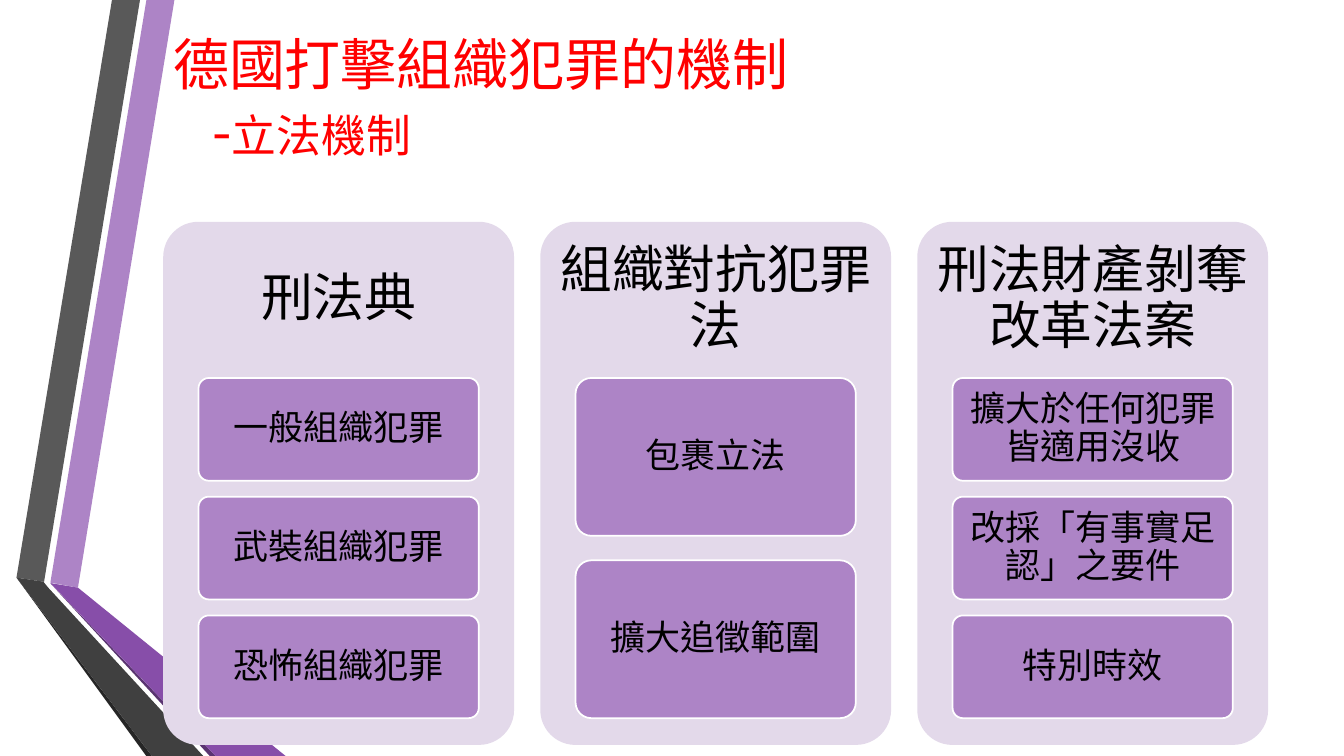
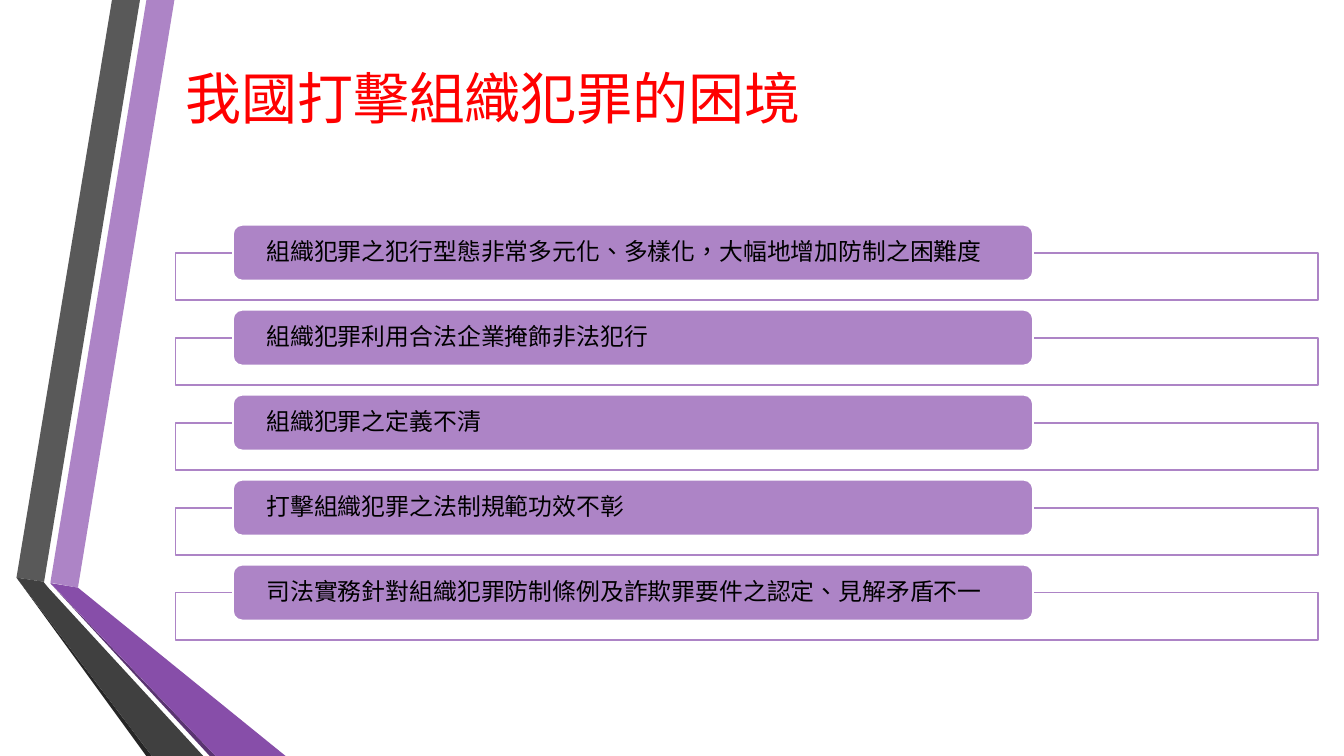
from dataclasses import dataclass

from lxml.etree import SubElement
from pptx import Presentation
from pptx.dml.color import RGBColor as Rgb
from pptx.enum.shapes import MSO_SHAPE as Form
from pptx.enum.text import MSO_ANCHOR as Anchor, PP_ALIGN as Align
from pptx.oxml.ns import qn
from pptx.util import Pt


@dataclass(frozen=True)
class Theme:
    font: str = "Noto Sans CJK SC"
    red: str = "FF0000"
    ink: str = "000000"
    white: str = "FFFFFF"
    lilac: str = "AD84C6"
    pale: str = "E3D9EA"
    violet: str = "874EA9"
    plum: str = "5A3471"
    gray: str = "595959"
    dark: str = "404040"
    coal: str = "262626"
    title: int = 40
    sub: int = 32
    head: int = 37
    item: int = 25
    row: int = 17
    edge: float = 1.25


THEME = Theme()

BANDS = [
    (THEME.lilac, [(36, 416.2), (55.7, 419.8), (124.6, 0), (104.6, 0)]),
    (THEME.gray, [(100, 0), (80, 0), (11.8, 412.6), (31.5, 415.6)]),
    (THEME.coal, [(11.8, 412.6), (104.5, 540), (108.5, 540)]),
    (THEME.plum, [(36, 416.7), (149.8, 540), (154, 540)]),
    (THEME.violet, [(36, 416.5), (154, 540), (204, 540), (55.7, 419.8)]),
    (THEME.dark, [(145.2, 540), (34.5, 419.8), (31, 415.5), (11.8, 412.6), (108.5, 540)]),
]

LAWS = [
    ("刑法典", ["一般組織犯罪", "武裝組織犯罪", "恐怖組織犯罪"]),
    ("組織對抗犯罪法", ["包裹立法", "擴大追徵範圍"]),
    ("刑法財產剝奪改革法案",
     ["擴大於任何犯罪皆適用沒收", "改採「有事實足認」之要件", "特別時效"]),
]

WOES = [
    "組織犯罪之犯行型態非常多元化、多樣化，大幅地增加防制之困難度",
    "組織犯罪利用合法企業掩飾非法犯行",
    "組織犯罪之定義不清",
    "打擊組織犯罪之法制規範功效不彰",
    "司法實務針對組織犯罪防制條例及詐欺罪要件之認定、見解矛盾不一",
]


def write(par, text, size, color=THEME.ink, align=Align.LEFT, lead=0.9):
    par.alignment = align
    par.line_spacing = lead
    run = par.add_run()
    run.text = text
    run.font.size = Pt(size)
    run.font.name = THEME.font
    run.font.color.rgb = Rgb.from_string(color)
    props = run.font._element
    props.set("lang", "zh-TW")
    SubElement(props, qn("a:ea")).set("typeface", THEME.font)


class Deck:
    def __init__(self, theme):
        self.theme = theme
        self.show = Presentation()
        self.show.slide_width = Pt(960)
        self.show.slide_height = Pt(540)
        self.slide = None

    def start(self):
        self.slide = self.show.slides.add_slide(self.show.slide_layouts[6])
        for color, points in BANDS:
            self.band(color, points)

    def paint(self, shape, fill, line=None):
        shape.shadow.inherit = False
        shape.fill.solid()
        shape.fill.fore_color.rgb = Rgb.from_string(fill)
        if line:
            shape.line.color.rgb = Rgb.from_string(line)
            shape.line.width = Pt(self.theme.edge)
        else:
            shape.line.fill.background()

    def band(self, color, points):
        first, *rest = [(Pt(x), Pt(y)) for x, y in points]
        pen = self.slide.shapes.build_freeform(*first)
        pen.add_line_segments(rest, close=True)
        self.paint(pen.convert_to_shape(), color)

    def frame(self, shape, pad):
        frame = shape.text_frame
        frame.word_wrap = True
        frame.vertical_anchor = Anchor.MIDDLE
        frame.margin_left, frame.margin_top, frame.margin_right, frame.margin_bottom = map(Pt, pad)
        return frame

    def title(self, left, text, sub=None):
        box = self.slide.shapes.add_textbox(Pt(left), Pt(0), Pt(789), Pt(138.2))
        frame = self.frame(box, (7.2, 3.6, 7.2, 3.6))
        look = dict(color=self.theme.red, lead=1.0)
        write(frame.paragraphs[0], text, self.theme.title, **look)
        if sub:
            par = frame.add_paragraph()
            par._p.get_or_add_pPr().set("marL", str(Pt(28)))
            write(par, "-", self.theme.title, **look)
            write(par, sub, self.theme.sub, **look)

    def block(self, left, top, width, height, fill, line=None, form=Form.ROUNDED_RECTANGLE,
              bend=None, text=None, pad=(5, 3, 5, 3), **look):
        shape = self.slide.shapes.add_shape(form, Pt(left), Pt(top), Pt(width), Pt(height))
        if bend is not None:
            shape.adjustments[0] = bend
        self.paint(shape, fill, line)
        if text:
            write(self.frame(shape, pad).paragraphs[0], text, **look)

    def column(self, left, head, items):
        theme = self.theme
        self.block(left, 158.4, 250.6, 373.7, theme.pale, bend=0.1, text=head,
                   pad=(3, 4, 3, 266), size=theme.head, align=Align.CENTER)
        ratio = 0.155
        height = 243 / (len(items) + ratio * (len(items) - 1))
        for i, item in enumerate(items):
            self.block(left + 25.2, 270 + i * height * (1 + ratio), 200.2, height,
                       theme.lilac, theme.white, bend=0.1, text=item,
                       size=theme.item, align=Align.CENTER)

    def row(self, top, text):
        theme = self.theme
        self.block(125.3, top + 19.9, 816.3, 34, theme.white, theme.lilac, form=Form.RECTANGLE)
        self.block(166.4, top, 571.5, 39.8, theme.lilac, theme.white, text=text,
                   pad=(22, 0, 22, 0), size=theme.row)


def main():
    deck = Deck(THEME)
    deck.start()
    deck.title(116.6, "德國打擊組織犯罪的機制", "立法機制")
    for i, (head, items) in enumerate(LAWS):
        deck.column(116.6 + i * 269.3, head, items)

    deck.start()
    deck.title(125.3, "我國打擊組織犯罪的困境")
    for i, woe in enumerate(WOES):
        deck.row(160.6 + i * 60.7, woe)
    deck.show.save("out.pptx")


if __name__ == "__main__":
    main()
